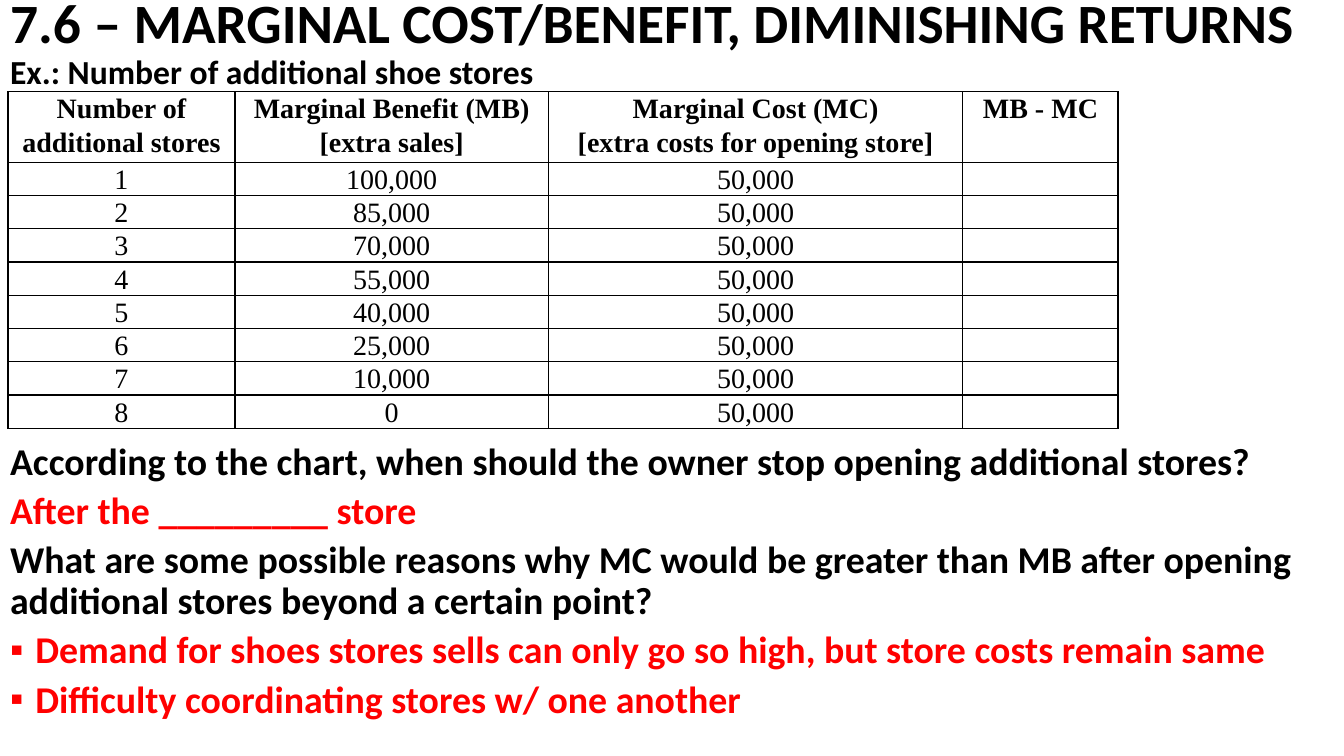
from dataclasses import dataclass

from lxml import etree
from pptx import Presentation
from pptx.dml.color import RGBColor
from pptx.enum.text import MSO_ANCHOR, MSO_AUTO_SIZE, PP_ALIGN
from pptx.oxml.ns import qn
from pptx.util import Inches, Pt

LEFT, CENTER = PP_ALIGN.LEFT, PP_ALIGN.CENTER
TOP, MIDDLE = MSO_ANCHOR.TOP, MSO_ANCHOR.MIDDLE
FIXED = MSO_AUTO_SIZE.NONE
COLORS = {"ink": "000000", "answer": "FF0000", "page": "FFFFFF"}
SANS, SERIF = "Calibri", "Times New Roman"
TITLE = "7.6 – MARGINAL COST/BENEFIT, DIMINISHING RETURNS"
HEADS = (
    "Number of additional stores",
    "Marginal Benefit (MB)\n[extra sales]",
    "Marginal Cost (MC)\n[extra costs for opening store]",
    "MB - MC",
)
GAINS = (100000, 85000, 70000, 55000, 40000, 25000, 10000, 0)
COST = 50000
WIDTHS = (2.25, 3.11, 4.11, 1.54)
HEAD_HIGH, ROW_HIGH = 0.7, 0.33


@dataclass
class Line:
    text: str
    size: float = 27
    color: str = "ink"
    before: float = 6
    bullet: str = ""


LINES = (
    Line("Ex.: Number of additional shoe stores", size=24, before=10),
    Line("According to the chart, when should the owner stop opening additional stores?",
         before=250.5),
    Line("After the _________ store", color="answer"),
    Line("What are some possible reasons why MC would be greater than MB "
         "after opening additional stores beyond a certain point?"),
    Line("Demand for shoes stores sells can only go so high, but store costs remain same",
         color="answer", bullet="▪"),
    Line("Difficulty coordinating stores w/ one another", color="answer", bullet="▪"),
)


def write(para, text: str, *, size: float, font: str = SANS, color: str = "ink",
          bold: bool = True, align=LEFT, space: float = 0.9, before: float = 0) -> None:
    para.alignment, para.line_spacing = align, space
    para.space_before, para.space_after = Pt(before), Pt(0)
    run = para.add_run()
    run.text = text
    run.font.name, run.font.size, run.font.bold = font, Pt(size), bold
    run.font.color.rgb = RGBColor.from_string(COLORS[color])


def mark(para, bullet: str) -> None:
    props = para._p.get_or_add_pPr()
    indent = Inches(0.25) if bullet else 0
    props.set("marL", str(indent))
    props.set("indent", str(-indent))
    if bullet:
        etree.SubElement(props, qn("a:buChar"), char=bullet)
    else:
        etree.SubElement(props, qn("a:buNone"))


def place(shape, top: float, high: float, anchor):
    shape.left, shape.top = Inches(0), Inches(top)
    shape.width, shape.height = Inches(13.33), Inches(high)
    frame = shape.text_frame
    frame.word_wrap, frame.auto_size = True, FIXED
    frame.vertical_anchor = anchor
    return frame


def border(cell) -> None:
    props = cell._tc.get_or_add_tcPr()
    for spot, side in enumerate(("lnL", "lnR", "lnT", "lnB")):
        edge = etree.Element(qn(f"a:{side}"), w=str(Pt(1)))
        fill = etree.SubElement(edge, qn("a:solidFill"))
        etree.SubElement(fill, qn("a:srgbClr"), val=COLORS["ink"])
        props.insert(spot, edge)


def fill_cell(cell, text: str, bold: bool) -> None:
    cell.margin_left = cell.margin_right = Inches(0.07)
    cell.margin_top = cell.margin_bottom = 0
    cell.fill.background()
    border(cell)
    frame = cell.text_frame
    for spot, part in enumerate(text.split("\n") if text else ()):
        para = frame.add_paragraph() if spot else frame.paragraphs[0]
        write(para, part, size=20, font=SERIF, bold=bold, align=CENTER, space=1.07)


def add_grid(slide) -> None:
    rows = [HEADS] + [(str(num), f"{gain:,}", f"{COST:,}", "")
                      for num, gain in enumerate(GAINS, 1)]
    highs = [HEAD_HIGH] + [ROW_HIGH] * len(GAINS)
    grid = slide.shapes.add_table(len(rows), len(WIDTHS), Inches(0.08), Inches(0.91),
                                  Inches(sum(WIDTHS)), Inches(sum(highs))).table
    grid.horz_banding = False
    for col, width in zip(grid.columns, WIDTHS):
        col.width = Inches(width)
    for place_y, (row, high) in enumerate(zip(rows, highs)):
        grid.rows[place_y].height = Inches(high)
        for place_x, text in enumerate(row):
            fill_cell(grid.cell(place_y, place_x), text, bold=place_y == 0)


def main() -> None:
    deck = Presentation()
    deck.slide_width, deck.slide_height = Inches(13.33), Inches(7.5)
    slide = deck.slides.add_slide(deck.slide_layouts[1])
    slide.background.fill.solid()
    slide.background.fill.fore_color.rgb = RGBColor.from_string(COLORS["page"])
    title = place(slide.shapes.title, 0, 0.5, MIDDLE)
    write(title.paragraphs[0], TITLE, size=39.6)
    body = place(slide.placeholders[1], 0.5, 7, TOP)
    for spot, line in enumerate(LINES):
        para = body.add_paragraph() if spot else body.paragraphs[0]
        write(para, line.text, size=line.size, color=line.color, before=line.before)
        mark(para, line.bullet)
    add_grid(slide)
    deck.save("out.pptx")


if __name__ == "__main__":
    main()
